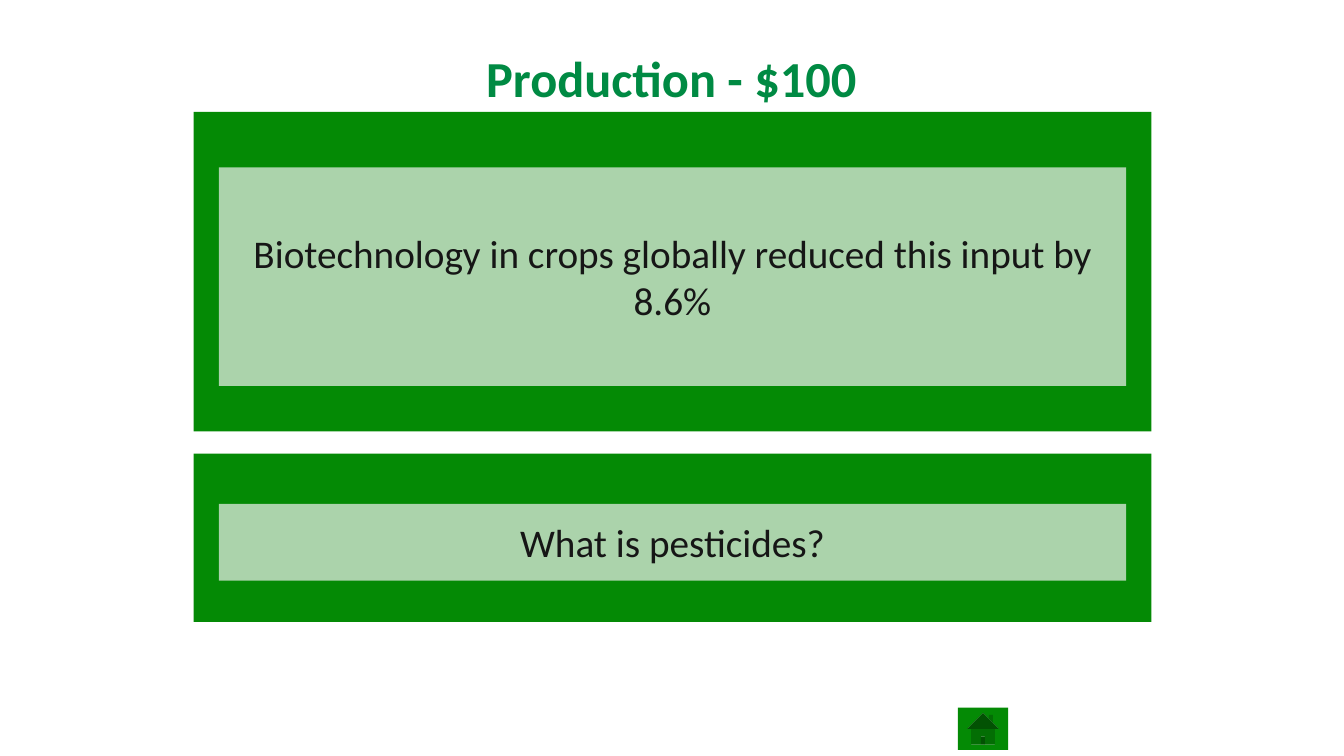
from dataclasses import dataclass

from lxml import etree
from pptx import Presentation
from pptx import util as u
from pptx.dml.color import RGBColor
from pptx.enum import shapes, text
from pptx.oxml.ns import qn

PX = 9144


@dataclass(frozen=True)
class Theme:
    """Colours, font and type sizes of the quiz."""
    green: str = "048A05"
    pale: str = "F2F2F2"
    ink: str = "161616"
    head: str = "008A43"
    font: str = "Calibri"
    big: int = 36
    mid: int = 28


LOOK = Theme()


def px(*nums):
    """Turn px lengths into EMU."""
    return [u.Emu(n * PX) for n in nums]


def style(para, size, hue, bold=False):
    """Centre a paragraph and set its font."""
    para.alignment = text.PP_ALIGN.CENTER
    font = para.font
    font.name, font.size, font.bold = LOOK.font, u.Pt(size), bold
    font.color.rgb = RGBColor.from_string(hue)


def block(slide, kind, box, hue):
    """Add a flat filled shape without outline."""
    shape = slide.shapes.add_shape(kind, *px(*box))
    shape.shadow.inherit = False
    shape.fill.solid()
    shape.fill.fore_color.rgb = RGBColor.from_string(hue)
    shape.line.fill.background()
    return shape


def title(slide, box, words):
    """Place and format the title."""
    shape = slide.shapes.title
    shape.left, shape.top, shape.width, shape.height = px(*box)
    frame = shape.text_frame
    frame.margin_left = frame.margin_right = 0
    frame.margin_top = frame.margin_bottom = 0
    frame.auto_size = text.MSO_AUTO_SIZE.NONE
    frame.vertical_anchor = text.MSO_ANCHOR.TOP
    frame.text = words
    style(frame.paragraphs[0], LOOK.big, LOOK.head, True)


def card(slide, box, top, tall, words):
    """Draw a green frame with a translucent text panel inside."""
    x, y, w, h = box
    pad = 25
    rect = shapes.MSO_SHAPE.RECTANGLE
    block(slide, rect, box, LOOK.green)
    panel = block(slide, rect, (x + pad, y + top, w - 2 * pad, tall), LOOK.pale)
    tint = panel.fill._xPr.find(".//" + qn("a:srgbClr"))
    etree.SubElement(tint, qn("a:alpha"), val="70000")
    frame = panel.text_frame
    frame.word_wrap = True
    frame.vertical_anchor = text.MSO_ANCHOR.MIDDLE
    frame.text = words
    style(frame.paragraphs[0], LOOK.mid, LOOK.ink)


def quiz(deck, head, clue, reply):
    """Build a slide with a clue, its reply and a home button."""
    slide = deck.slides.add_slide(deck.slide_layouts[5])
    title(slide, (24, 47, 1284, 93), head)
    card(slide, (192, 111, 950, 317), 55, 217, clue)
    card(slide, (192, 450, 950, 167), 50, 76, reply)
    home = shapes.MSO_SHAPE.ACTION_BUTTON_HOME
    block(slide, home, (950, 702, 50, 42), LOOK.green)


def main():
    """Make and save the deck."""
    deck = Presentation()
    deck.slide_width, deck.slide_height = px(1333, 750)
    quiz(deck, "Production - $100",
         "Biotechnology in crops globally reduced this input by 8.6%",
         "What is pesticides?")
    deck.save("out.pptx")


if __name__ == "__main__":
    main()
